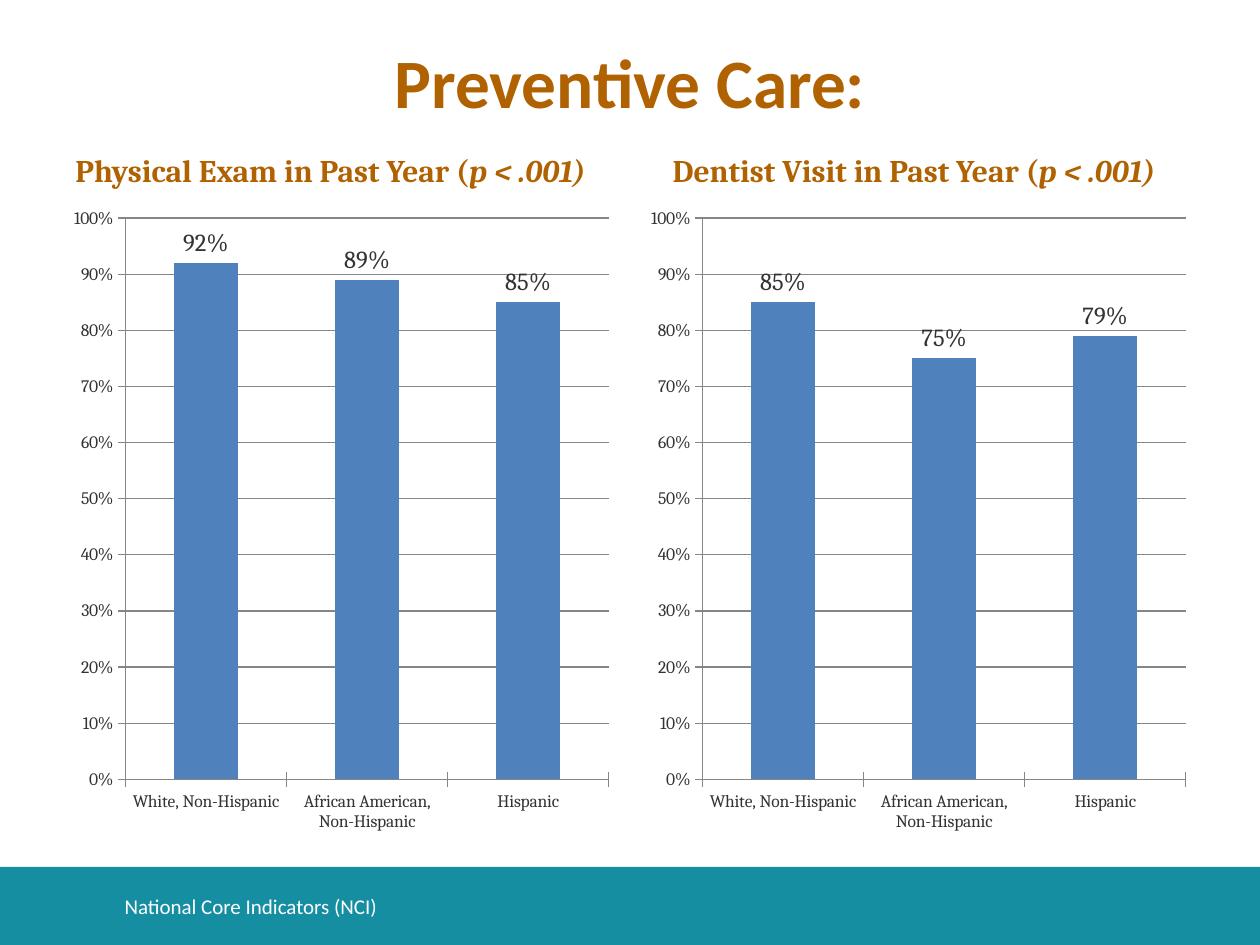
import pptx
import pptx.chart.data
import pptx.dml.color
import pptx.enum.chart
import pptx.enum.shapes
import pptx.enum.text
import pptx.util

Inches = pptx.util.Inches
RGBColor = pptx.dml.color.RGBColor
ANCHOR = pptx.enum.text.MSO_ANCHOR
CHART = pptx.enum.chart

BROWN = RGBColor(0xB0, 0x61, 0x00)
TEAL = RGBColor(0x16, 0x8E, 0xA2)
BLUE = RGBColor(0x4F, 0x81, 0xBD)
DARK = RGBColor(0x33, 0x33, 0x33)
GRAY = RGBColor(0x86, 0x86, 0x86)
WHITE = RGBColor(0xFF, 0xFF, 0xFF)

GROUPS = ["White, Non-Hispanic", "African American, Non-Hispanic", "Hispanic"]
PANELS = [
    ("Physical Exam in Past Year (", 0.5, 0.5, (0.92, 0.89, 0.85)),
    ("Dentist Visit in Past Year (", 5.24, 5.08, (0.85, 0.75, 0.79)),
]


class Deck:
    sans = "Calibri"
    serif = "Cambria"

    def __init__(self, prs):
        self.s = prs.slides.add_slide(prs.slide_layouts[5])

    def font(self, font, name, size, color, bold=False):
        font.name = name
        font.size = pptx.util.Pt(size)
        font.color.rgb = color
        font.bold = bold

    def title(self, text, x, y, w, h):
        sp = self.s.shapes.title
        sp.left, sp.top, sp.width, sp.height = map(Inches, (x, y, w, h))
        tf = sp.text_frame
        tf.text = text
        tf.vertical_anchor = ANCHOR.MIDDLE
        p = tf.paragraphs[0]
        p.alignment = pptx.enum.text.PP_ALIGN.CENTER
        self.font(p.font, self.sans, 39.6, BROWN, True)

    def band(self, x, y, w, h):
        rect = pptx.enum.shapes.MSO_SHAPE.RECTANGLE
        sp = self.s.shapes.add_shape(rect, *map(Inches, (x, y, w, h)))
        sp.shadow.inherit = False
        sp.fill.solid()
        sp.fill.fore_color.rgb = TEAL
        sp.line.fill.background()

    def text(self, text, x, y, w, h, anchor):
        tf = self.s.shapes.add_textbox(*map(Inches, (x, y, w, h))).text_frame
        tf.word_wrap = True
        tf.vertical_anchor = anchor
        p = tf.paragraphs[0]
        p.add_run().text = text
        return p

    def heading(self, text, x, y, w, h):
        p = self.text(text, x, y, w, h, ANCHOR.BOTTOM)
        self.font(p.font, self.serif, 18, BROWN, True)
        r = p.add_run()
        r.text = "p < .001)"
        r.font.italic = True

    def footer(self, text, x, y, w, h):
        p = self.text(text, x, y, w, h, ANCHOR.MIDDLE)
        self.font(p.font, self.sans, 12, WHITE)

    def chart(self, values, x, y, w, h):
        data = pptx.chart.data.CategoryChartData(number_format="0%")
        data.categories = GROUPS
        data.add_series("Series 1", values)
        kind = CHART.XL_CHART_TYPE.COLUMN_CLUSTERED
        chart = self.s.shapes.add_chart(
            kind, *map(Inches, (x, y, w, h)), data).chart
        chart.has_legend = False
        chart.has_title = False
        self.font(chart.font, self.serif, 10, DARK)
        for axis in (chart.category_axis, chart.value_axis):
            axis.major_tick_mark = CHART.XL_TICK_MARK.CROSS
            axis.format.line.color.rgb = GRAY
        axis = chart.value_axis
        axis.minimum_scale, axis.maximum_scale = 0, 1
        axis.major_unit = 0.1
        axis.has_major_gridlines = True
        axis.major_gridlines.format.line.color.rgb = GRAY
        axis.tick_labels.number_format = "0%"
        axis.tick_labels.number_format_is_linked = False
        plot = chart.plots[0]
        plot.gap_width = 150
        plot.vary_by_categories = False
        fill = plot.series[0].format.fill
        fill.solid()
        fill.fore_color.rgb = BLUE
        labels = plot.series[0].data_labels
        labels.show_value = True
        labels.number_format = "0%"
        labels.number_format_is_linked = False
        labels.position = CHART.XL_LABEL_POSITION.OUTSIDE_END
        self.font(labels.font, self.serif, 14, DARK)


def main():
    prs = pptx.Presentation()
    prs.slide_width, prs.slide_height = Inches(10), Inches(7.5)
    deck = Deck(prs)
    deck.band(0, 6.88, 10, 0.62)
    deck.footer("National Core Indicators (NCI)", 0.89, 6.99, 7.4, 0.4)
    deck.title("Preventive Care:", 0.5, 0.29, 9, 0.71)
    for heading, heading_x, chart_x, values in PANELS:
        deck.heading(heading, heading_x, 0.85, 4.42, 0.7)
        deck.chart(values, chart_x, 1.55, 4.42, 5.15)
    prs.save("out.pptx")


if __name__ == "__main__":
    main()
